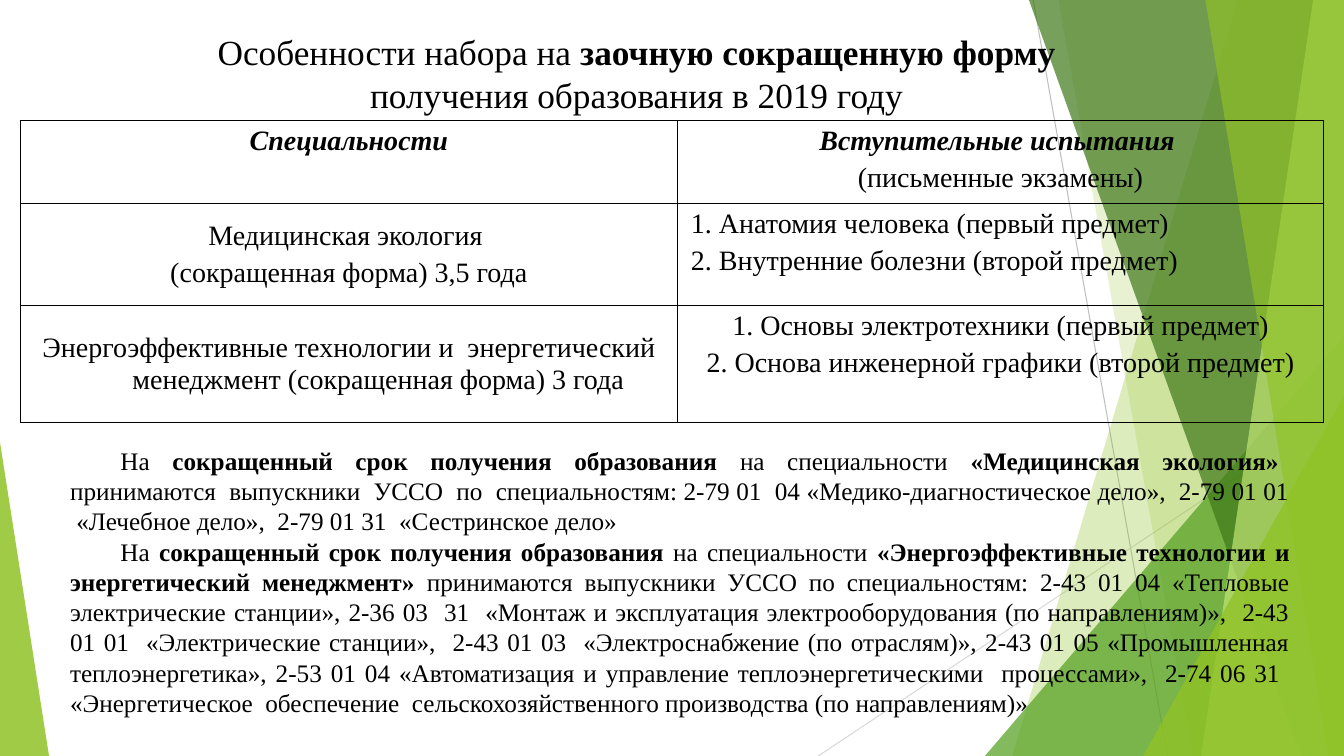
"""Builds the slide on admission to the shortened correspondence course."""
from lxml import etree
from pptx import Presentation
from pptx.dml.color import RGBColor
from pptx.enum.shapes import MSO_CONNECTOR, MSO_SHAPE
from pptx.enum.text import MSO_ANCHOR, PP_ALIGN
from pptx.oxml.ns import qn
from pptx.util import Pt

STRAIGHT = MSO_CONNECTOR.STRAIGHT
TRIANGLE = MSO_SHAPE.ISOSCELES_TRIANGLE
TOP, MIDDLE = MSO_ANCHOR.TOP, MSO_ANCHOR.MIDDLE
CENTER, JUSTIFY = PP_ALIGN.CENTER, PP_ALIGN.JUSTIFY
BLACK = RGBColor(0x00, 0x00, 0x00)
GRAY = RGBColor(0xBF, 0xBF, 0xBF)
LIGHT_GRAY = RGBColor(0xD9, 0xD9, 0xD9)
LIME = RGBColor(0x90, 0xC2, 0x26)
GREEN = RGBColor(0x54, 0xA0, 0x21)
DARK_GREEN = RGBColor(0x3F, 0x78, 0x19)
PALE_LIME = RGBColor(0xC0, 0xE4, 0x74)
WIDTH, HEIGHT = 960, 540


def add_text(paragraph, text, size=20, bold=False, italic=False):
    """Append a run of formatted text to a paragraph."""
    run = paragraph.add_run()
    run.text = text
    run.font.name = "Times New Roman"
    run.font.size = Pt(size)
    run.font.bold = bold
    run.font.italic = italic
    run.font.color.rgb = BLACK


def paint(facet, color, opacity):
    """Give a facet a see-through fill without outline or shadow."""
    facet.shadow.inherit = False
    facet.line.fill.background()
    facet.fill.solid()
    facet.fill.fore_color.rgb = color
    tint = facet.fill._xPr.find(qn("a:solidFill"))[0]
    etree.SubElement(tint, qn("a:alpha"), val=str(opacity * 1000))


prs = Presentation()
prs.slide_width, prs.slide_height = Pt(WIDTH), Pt(HEIGHT)
slide = prs.slides.add_slide(prs.slide_layouts[6])
shapes = slide.shapes

for x1, y1, x2, y2, color in [
    (738, 0, 834, HEIGHT, GRAY),
    (WIDTH, 290, 584.5, HEIGHT, LIGHT_GRAY),
]:
    ray = shapes.add_connector(STRAIGHT, Pt(x1), Pt(y1), Pt(x2), Pt(y2))
    ray.line.color.rgb = color
    ray.line.width = Pt(0.75)
    etree.SubElement(ray._element.spPr, qn("a:effectLst"))

BANDS = [
    (884, 723, LIME, 30),
    (756, 852, LIME, 20),
    (735, 929.5, DARK_GREEN, 70),
    (938, 858, PALE_LIME, 70),
    (861, 949, LIME, 65),
]
TRIANGLES = [
    (703.5, 240, 256.5, 1, GREEN, 72),
    (816.5, 283, 143.5, 1, LIME, 80),
    (0, 316, 35, 0, LIME, 85),
]
FACETS = BANDS[:2] + TRIANGLES[:1] + BANDS[2:] + TRIANGLES[1:]
for facet in FACETS:
    *place, color, opacity = facet
    if facet in BANDS:
        top_x, bottom_x = place
        outline = shapes.build_freeform(Pt(top_x), 0)
        outline.add_line_segments(
            [(Pt(WIDTH), 0), (Pt(WIDTH), Pt(HEIGHT)), (Pt(bottom_x), Pt(HEIGHT))]
        )
        paint(outline.convert_to_shape(), color, opacity)
    else:
        left, top, width, apex = place
        corner = shapes.add_shape(
            TRIANGLE, Pt(left), Pt(top), Pt(width), Pt(HEIGHT - top)
        )
        corner.adjustments[0] = apex
        paint(corner, color, opacity)

title = shapes.add_textbox(Pt(126.5), Pt(17.5), Pt(656.5), Pt(69)).text_frame
title.word_wrap = True
title.vertical_anchor = MIDDLE
heading = title.paragraphs[0]
heading.alignment = CENTER
add_text(heading, "Особенности набора на ", size=25.2)
add_text(heading, "заочную сокращенную форму ", size=25.2, bold=True)
add_text(heading, "получения образования в 2019 году", size=25.2)

STRONG = {"bold": True, "italic": True}
ROWS = [
    [
        (TOP, CENTER, 0, [("Специальности", STRONG)]),
        (TOP, CENTER, 0, [("Вступительные испытания ", STRONG),
                          ("(письменные экзамены)", {})]),
    ],
    [
        (MIDDLE, CENTER, 0, [("Медицинская экология ", {}),
                             ("(сокращенная форма) 3,5 года", {})]),
        (TOP, JUSTIFY, 0, [("1. Анатомия человека (первый предмет)", {}),
                           ("2. Внутренние болезни (второй предмет)", {})]),
    ],
    [
        (MIDDLE, CENTER, 42, [("Энергоэффективные технологии и  энергетический "
                               "менеджмент (сокращенная форма) 3 года", {})]),
        (TOP, CENTER, 36, [("1. Основы электротехники (первый предмет)", {}),
                           ("2. Основа инженерной графики (второй предмет)", {})]),
    ],
]
exams = shapes.add_table(3, 2, Pt(14.5), Pt(86), Pt(931), Pt(211.5)).table
exams.first_row = exams.horz_banding = False
for column, width in zip(exams.columns, (469.5, 461.5)):
    column.width = Pt(width)
for row, height in zip(exams.rows, (55, 73, 83.5)):
    row.height = Pt(height)

for row, contents in zip(exams.rows, ROWS):
    for cell, (anchor, alignment, hanging, lines) in zip(row.cells, contents):
        cell.vertical_anchor = anchor
        cell.margin_left = cell.margin_right = Pt(9.5)
        cell.margin_top = cell.margin_bottom = Pt(3.6)
        properties = cell._tc.get_or_add_tcPr()
        for side in ("a:lnL", "a:lnR", "a:lnT", "a:lnB"):
            border = etree.SubElement(properties, qn(side), w=str(Pt(1)))
            ink = etree.SubElement(border, qn("a:solidFill"))
            etree.SubElement(ink, qn("a:srgbClr"), val=str(BLACK))
        cell.fill.background()
        for number, (text, style) in enumerate(lines):
            frame = cell.text_frame
            line = frame.add_paragraph() if number else frame.paragraphs[0]
            line.alignment = alignment
            line.space_before = Pt(4 if number else 0)
            indents = line._p.get_or_add_pPr()
            indents.set("marL", str(Pt(hanging)))
            indents.set("indent", str(Pt(-hanging)))
            add_text(line, text, **style)

NOTES = [
    [
        ("На  ", False),
        ("сокращенный  срок  получения  образования  ", True),
        ("на  специальности  ", False),
        ("«Медицинская  экология»  ", True),
        ("принимаются  выпускники  УССО  по  специальностям: 2-79 01  04 "
         "«Медико-диагностическое дело»,  2-79 01 01  «Лечебное дело»,  "
         "2-79 01 31  «Сестринское дело»", False),
    ],
    [
        ("На ", False),
        ("сокращенный срок получения образования", True),
        (" на специальности ", False),
        ("«Энергоэффективные технологии и энергетический менеджмент» ", True),
        ("принимаются выпускники УССО по специальностям: 2-43 01 04 «Тепловые "
         "электрические станции», 2-36 03  31  «Монтаж и эксплуатация "
         "электрооборудования (по направлениям)»,  2-43 01 01  «Электрические "
         "станции»,  2-43 01 03  «Электроснабжение (по отраслям)», 2-43 01 05 "
         "«Промышленная теплоэнергетика», 2-53 01 04 «Автоматизация и управление "
         "теплоэнергетическими  процессами»,  2-74 06 31  «Энергетическое  "
         "обеспечение  сельскохозяйственного производства (по направлениям)»",
         False),
    ],
]
notes = shapes.add_textbox(Pt(43), Pt(314.5), Pt(885.5), Pt(204)).text_frame
notes.word_wrap = True
for number, parts in enumerate(NOTES):
    note = notes.add_paragraph() if number else notes.paragraphs[0]
    note.alignment = JUSTIFY
    note._p.get_or_add_pPr().set("indent", str(Pt(36)))
    for text, bold in parts:
        add_text(note, text, size=18, bold=bold)

prs.save("out.pptx")
